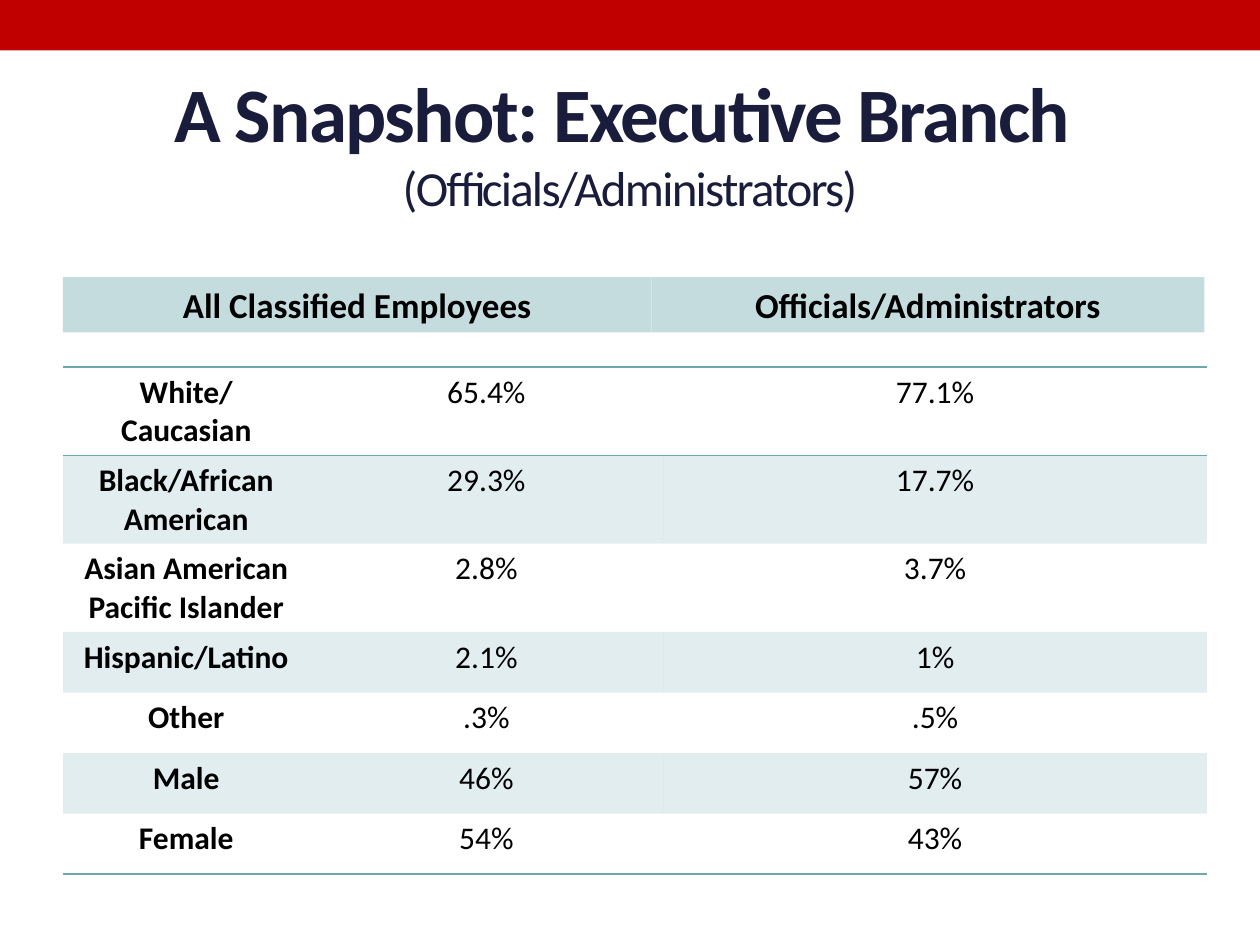
import pptx
import pptx.util
import pptx.dml.color
import pptx.enum.shapes
import pptx.enum.text
import pptx.oxml
import pptx.oxml.ns

Cm, Pt = pptx.util.Cm, pptx.util.Pt
qn = pptx.oxml.ns.qn
COLORS = {"red": "C00000", "navy": "191C3B", "pale": "C5DCDF",
          "teal": "6DA7AF", "black": "000000"}
NO_STYLE = "{2D5ABB26-0587-4C30-8999-92F81FD0307C}"
BORDER = ('<a:{tag} xmlns:a="http://schemas.openxmlformats.org/drawingml/2006/main" '
          'w="12700"><a:solidFill><a:srgbClr val="{hue}"/></a:solidFill></a:{tag}>')


def rgb(name):
    return pptx.dml.color.RGBColor.from_string(COLORS[name])


class Page:
    """Holds the text style and the current slide."""

    def __init__(self, slide):
        self.slide = slide
        self.style = {"name": "Calibri", "size": Pt(18), "bold": False}

    def label(self, para, text, hue="black", **form):
        para.alignment = pptx.enum.text.PP_ALIGN.CENTER
        run = para.add_run()
        run.text = text
        for key, value in {**self.style, **form}.items():
            setattr(run.font, key, value)
        run.font.color.rgb = rgb(hue)
        return run

    def bar(self, left, top, width, height, hue, text=None):
        shape = self.slide.shapes.add_shape(
            pptx.enum.shapes.MSO_SHAPE.RECTANGLE,
            Cm(left), Cm(top), Cm(width), Cm(height))
        shape.shadow.inherit = False
        shape.fill.solid()
        shape.fill.fore_color.rgb = rgb(hue)
        shape.line.fill.background()
        if text:
            self.label(shape.text_frame.paragraphs[0], text, size=Pt(20), bold=True)

    def title(self, left, top, width, height, head, sub):
        box = self.slide.shapes.add_textbox(Cm(left), Cm(top), Cm(width), Cm(height))
        frame = box.text_frame
        frame.word_wrap = True
        frame.vertical_anchor = pptx.enum.text.MSO_ANCHOR.MIDDLE
        para = frame.paragraphs[0]
        runs = [self.label(para, head, "navy", size=Pt(44), bold=True)]
        para.add_line_break()
        runs.append(self.label(para, sub, "navy", size=Pt(28)))
        # Tight letter spacing
        for run in runs:
            run._r.get_or_add_rPr().set("spc", "-100")

    def edge(self, cell, tags):
        props = cell._tc.get_or_add_tcPr()
        for spot, tag in enumerate(tags):
            props.insert(spot, pptx.oxml.parse_xml(
                BORDER.format(tag=tag, hue=COLORS["teal"])))

    def shade(self, cell, band):
        if not band:
            cell.fill.background()
            return
        cell.fill.solid()
        cell.fill.fore_color.rgb = rgb("teal")
        # Fill at 20 % opacity
        hue = cell._tc.tcPr.find(".//" + qn("a:srgbClr"))
        hue.append(hue.makeelement(qn("a:alpha"), {"val": "20000"}))

    def table(self, left, top, cols, highs, rows):
        frame = self.slide.shapes.add_table(
            len(rows), len(cols), Cm(left), Cm(top), Cm(sum(cols)), Cm(sum(highs)))
        grid = frame.table
        grid.first_row = grid.horz_banding = False
        frame.element.find(".//" + qn("a:tableStyleId")).text = NO_STYLE
        for col, width in zip(grid.columns, cols):
            col.width = Cm(width)
        edges = {0: ["lnT", "lnB"], len(rows) - 1: ["lnB"]}
        for r, (row, high) in enumerate(zip(rows, highs)):
            grid.rows[r].height = Cm(high)
            for c, text in enumerate(row):
                cell = grid.cell(r, c)
                self.label(cell.text_frame.paragraphs[0], text, bold=c == 0)
                self.shade(cell, r % 2)
                self.edge(cell, edges.get(r, []))


def main():
    deck = pptx.Presentation()
    deck.slide_width, deck.slide_height = Cm(25.4), Cm(19.05)
    page = Page(deck.slides.add_slide(deck.slide_layouts[6]))

    # Top band and title
    page.bar(0, 0, 25.4, 1.02, "red")
    page.title(1.27, 1.47, 22.86, 2.74,
               "A Snapshot: Executive Branch ", "(Officials/Administrators)")

    # Group headings
    page.bar(1.27, 5.59, 11.86, 1.11, "pale", "All Classified Employees")
    page.bar(13.13, 5.59, 11.15, 1.11, "pale", "Officials/Administrators")

    # Shares by group
    rows = [
        ("White/Caucasian", "65.4%", "77.1%"),
        ("Black/African American", "29.3%", "17.7%"),
        ("Asian American Pacific Islander", "2.8%", "3.7%"),
        ("Hispanic/Latino", "2.1%", "1%"),
        ("Other", ".3%", ".5%"),
        ("Male", "46%", "57%"),
        ("Female", "54%", "43%"),
    ]
    page.table(1.27, 7.4, [4.97, 7.13, 10.96], [1.78] * 3 + [1.22] * 4, rows)

    deck.save("out.pptx")


if __name__ == "__main__":
    main()
